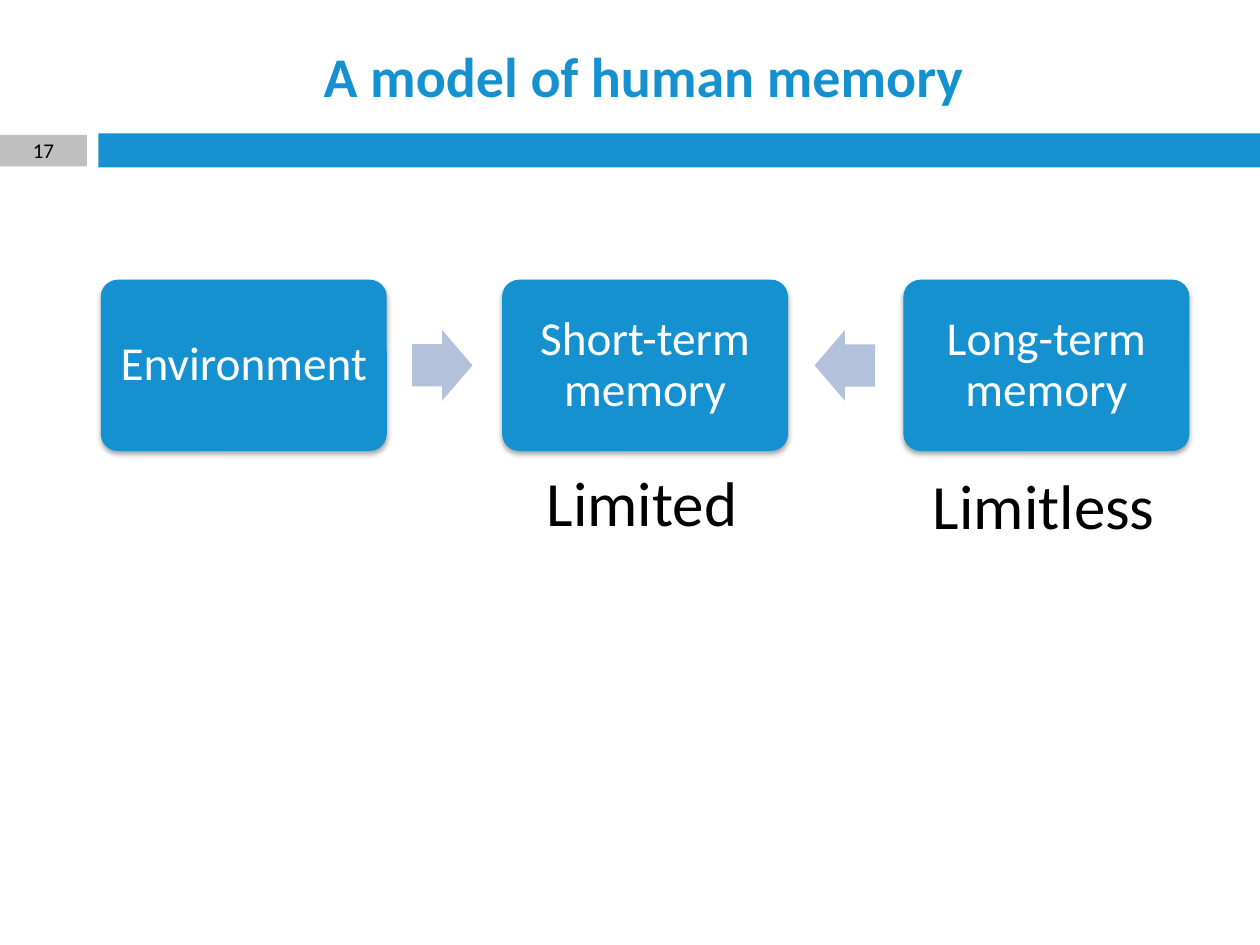
from lxml import etree
from pptx import Presentation
from pptx.dml.color import RGBColor
from pptx.enum.shapes import MSO_SHAPE
from pptx.enum.text import MSO_ANCHOR, PP_ALIGN
from pptx.oxml import parse_xml
from pptx.oxml.ns import qn
from pptx.util import Inches, Pt

RECTANGLE = MSO_SHAPE.RECTANGLE
ROUNDED = MSO_SHAPE.ROUNDED_RECTANGLE
ARROW = MSO_SHAPE.RIGHT_ARROW
TOP, MIDDLE = MSO_ANCHOR.TOP, MSO_ANCHOR.MIDDLE
CENTER = PP_ALIGN.CENTER

BLUE, GREY, PALE_BLUE = "1691D0", "BFBFBF", "B3C1DB"
WHITE, BLACK = "FFFFFF", "000000"

SHADOW = (
    '<a:outerShdw xmlns:a="http://schemas.openxmlformats.org/drawingml/2006/main" '
    f'blurRad="{Pt(3.1)}" dist="{Pt(1.8)}" dir="5400000" rotWithShape="0">'
    '<a:srgbClr val="000000"><a:alpha val="35000"/></a:srgbClr></a:outerShdw>'
)


def color(value):
    return RGBColor.from_string(value)


def add_block(page, kind, box, fill):
    block = page.shapes.add_shape(kind, *map(Inches, box))
    block.shadow.inherit = False
    block.fill.solid()
    block.fill.fore_color.rgb = color(fill)
    block.line.fill.background()
    return block


def write(shape, text, size, ink, anchor=MIDDLE, bold=False):
    frame = shape.text_frame
    frame.word_wrap = True
    frame.vertical_anchor = anchor
    para = frame.paragraphs[0]
    para.text = text
    para.alignment = CENTER
    para.font.name = "Calibri"
    para.font.size = Pt(size)
    para.font.bold = bold
    para.font.color.rgb = color(ink)
    return para


def add_label(page, box, text, size, ink, **style):
    label = page.shapes.add_textbox(*map(Inches, box))
    write(label, text, size, ink, **style)


def add_header(page, left, top, width, height):
    """Title above a full-width bar, with the page number at its left."""
    add_block(page, RECTANGLE, (left + 0.78, top + 1.06, width - 0.78, height - 1.06), BLUE)
    number = add_block(page, RECTANGLE, (left, top + 1.07, 0.69, 0.25), GREY)
    write(number, "17", 12, BLACK)
    add_label(page, (left + 0.78, top + 0.26, 8.66, 0.68),
              "A model of human memory", 32, BLUE, bold=True)


def add_store(page, box, text):
    """Rounded box for one part of the memory model."""
    store = add_block(page, ROUNDED, box, BLUE)
    store.adjustments[0] = 0.1
    effects = store.element.spPr.find(qn("a:effectLst"))
    etree.ElementBase.append(effects, parse_xml(SHADOW))
    para = write(store, text, 27, WHITE)
    para.line_spacing = 0.9
    frame = store.text_frame
    frame.margin_left = frame.margin_right = Inches(0.1)
    frame.margin_top = frame.margin_bottom = Inches(0.1)


def add_memory_model(page, left, top, width, height):
    """Three boxes at equal steps; both arrows point to the middle one."""
    store_width = 2.27
    step = (width - store_width) / 2
    arrow_width, arrow_height = 0.48, 0.56
    stores = ["Environment", "Short-term memory", "Long-term memory"]
    for index, text in enumerate(stores):
        add_store(page, (left + index * step, top, store_width, height), text)

    arrow_top = top + (height - arrow_height) / 2
    for index, (offset, turn) in enumerate([(0.2, 0), (0.21, 180)]):
        arrow_left = left + index * step + store_width + offset
        arrow = add_block(page, ARROW, (arrow_left, arrow_top, arrow_width, arrow_height),
                          PALE_BLUE)
        arrow.adjustments[0] = 0.6
        arrow.adjustments[1] = 0.5
        arrow.rotation = turn


def add_capacities(page):
    """Capacity of each memory, under its box."""
    add_label(page, (4.19, 3.63, 1.81, 1.01), "Limited", 36, BLACK, anchor=TOP)
    add_label(page, (6.89, 3.65, 2.79, 1.01), "Limitless", 36, BLACK, anchor=TOP)


def main():
    deck = Presentation()
    deck.slide_width, deck.slide_height = Inches(10), Inches(7.5)
    page = deck.slides.add_slide(deck.slide_layouts[6])
    add_header(page, 0, 0, 10, 1.33)
    add_memory_model(page, 0.8, 2.22, 8.64, 1.36)
    add_capacities(page)
    deck.save("out.pptx")


if __name__ == "__main__":
    main()
